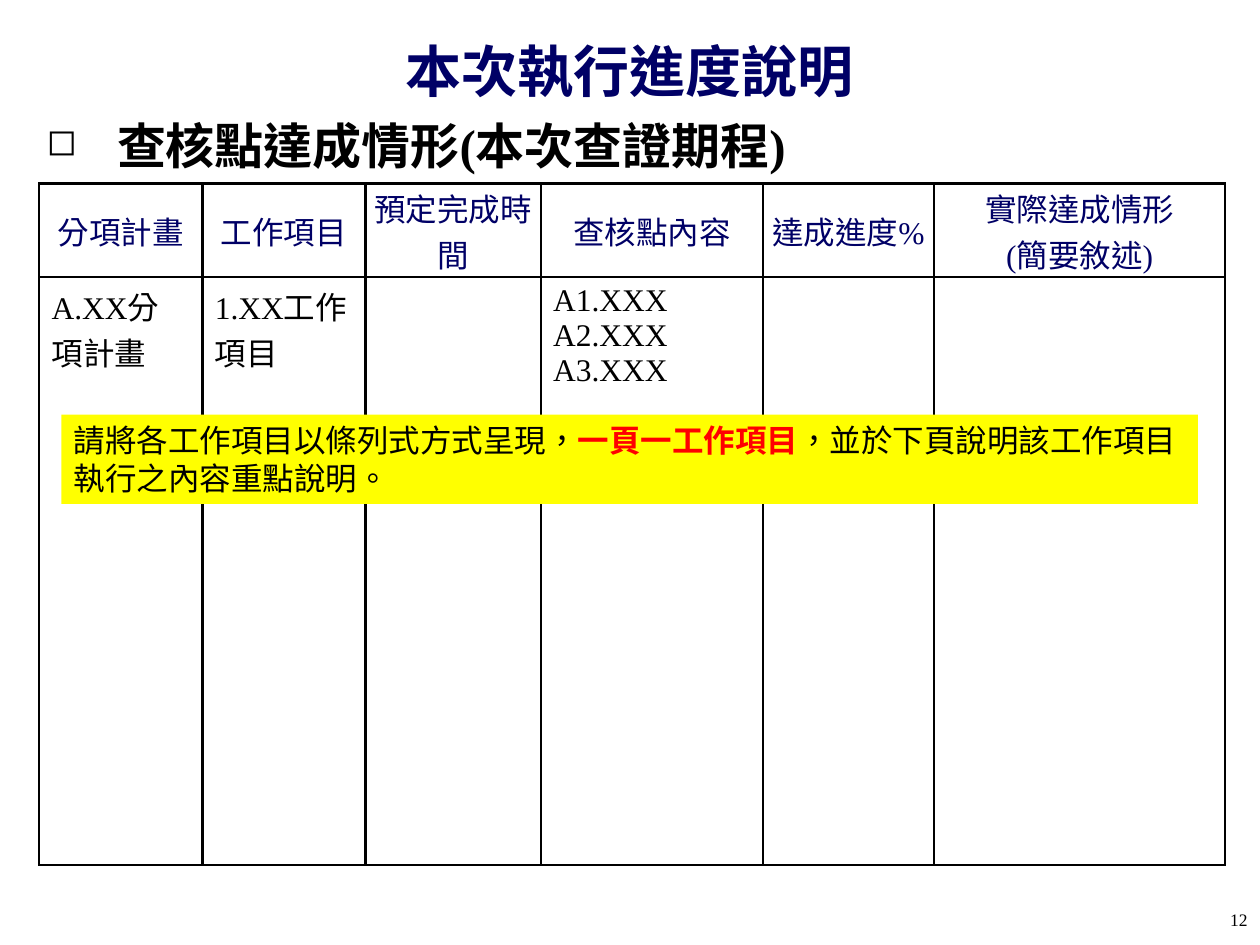
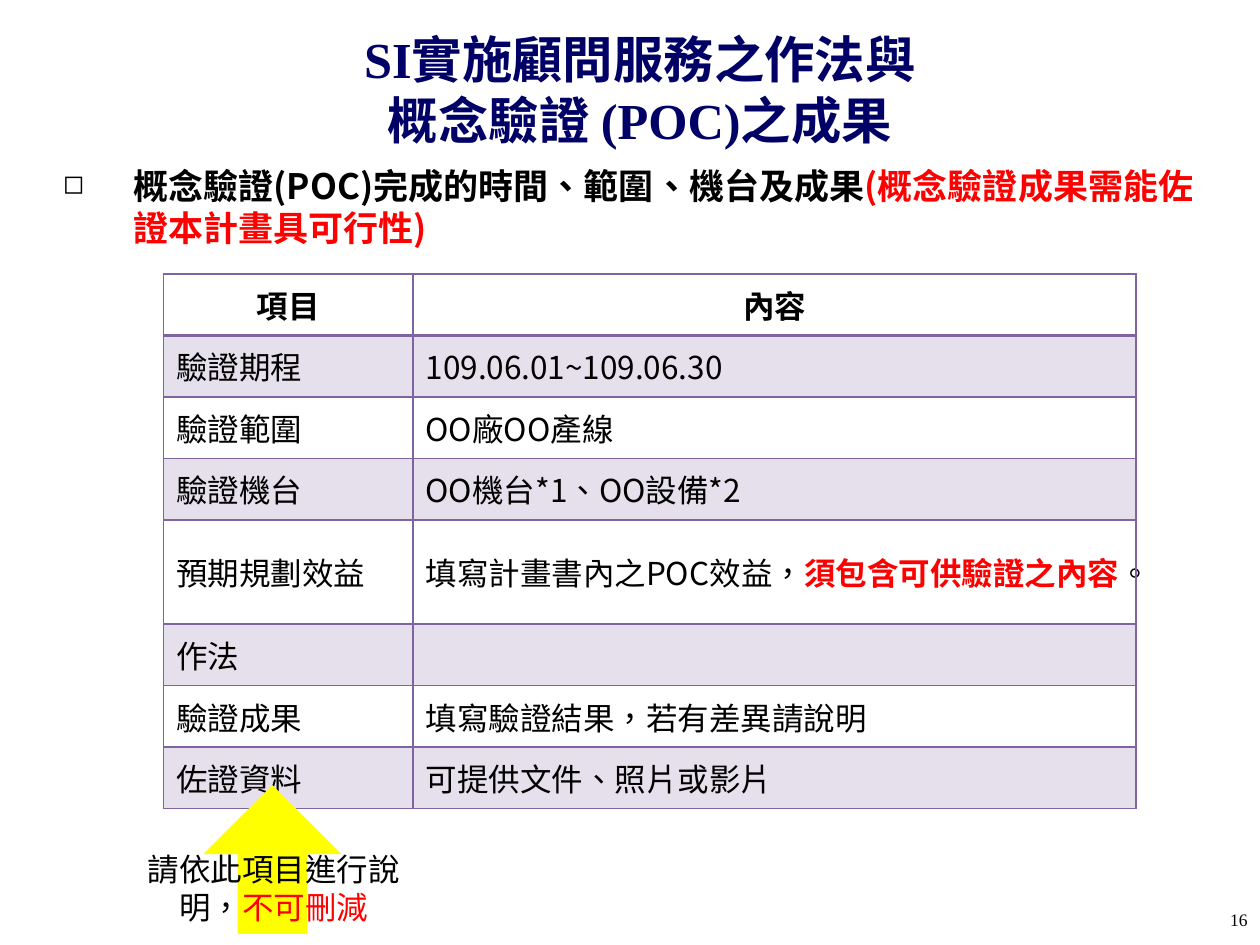
from dataclasses import dataclass, replace
from typing import NamedTuple, Optional

from lxml.etree import SubElement
from pptx import Presentation
from pptx.dml.color import RGBColor as Rgb
from pptx.enum.lang import MSO_LANGUAGE_ID as Lang
from pptx.enum.shapes import MSO_SHAPE as Shape
from pptx.enum.text import MSO_ANCHOR as Anchor, MSO_AUTO_SIZE as Auto, PP_ALIGN as Align
from pptx.oxml.ns import qn
from pptx.util import Cm, Pt


@dataclass(frozen=True)
class Theme:
    navy: str = "000066"
    black: str = "000000"
    red: str = "FF0000"
    yellow: str = "FFFF00"
    white: str = "FFFFFF"
    purple: str = "8064A2"
    lilac: str = "E6E0EC"
    serif: str = "Times New Roman"
    sans: str = "Noto Sans CJK SC"
    title: float = 32
    long_title: float = 28.8
    head: float = 28
    lead: float = 20
    text: float = 18
    page: float = 10
    leading: float = 1.2


T = Theme()


class Bit(NamedTuple):
    text: str
    color: Optional[str] = None
    bold: Optional[bool] = None


class Box(NamedTuple):
    """Left, top, width and height in centimetres."""
    left: float
    top: float
    width: float
    height: float

    def cm(self) -> list:
        return [Cm(n) for n in self]


@dataclass(frozen=True)
class Style:
    size: float = T.text
    face: str = T.sans
    color: str = T.black
    bold: bool = False
    align: Align = Align.LEFT
    tight: bool = True
    bullet: bool = False


@dataclass(frozen=True)
class Look:
    """Style, fill, anchor, margins and border widths of a table cell."""
    style: Style
    fill: Optional[str]
    edge: str
    line: float
    base: float
    anchor: Anchor = Anchor.MIDDLE
    inset: tuple = (0.25, 0.13, 0.25, 0.13)


TITLE = Style(T.title, T.serif, T.navy, True, Align.CENTER)
HEAD = Style(T.head, T.serif, bold=True, bullet=True)
LEAD = Style(T.lead, bold=True, bullet=True)
PAGE = Style(T.page, T.serif, align=Align.RIGHT)
NOTE = Style()
CELL = Style(tight=False)

PLAN_CELL = Look(replace(CELL, face=T.serif), T.white, T.black, 1.5, 1.5, Anchor.TOP)
PLAN_HEAD = replace(
    PLAN_CELL, anchor=Anchor.MIDDLE, inset=(0.03, 0.03, 0.03, 0),
    style=replace(PLAN_CELL.style, color=T.navy, align=Align.CENTER))
POC_CELL = Look(CELL, None, T.purple, 1, 1)
POC_BAND = replace(POC_CELL, fill=T.lilac)
POC_HEAD = replace(POC_CELL, base=2,
                   style=replace(CELL, bold=True, align=Align.CENTER))


def add_run(para, bit: Bit, style: Style) -> None:
    for n, part in enumerate(bit.text.split("\n")):
        if n:
            para.add_line_break()
        run = para.add_run()
        run.text = part
        font = run.font
        font.size = Pt(style.size)
        font.bold = style.bold if bit.bold is None else bit.bold
        font.color.rgb = Rgb.from_string(bit.color or style.color)
        font.language_id = Lang.TRADITIONAL_CHINESE
        font.name = style.face
        SubElement(font._element, qn("a:ea"), typeface=T.sans)


def write(frame, paras: list, style: Style) -> None:
    """Fill a text frame; a paragraph is a string or a list of bits."""
    for n, item in enumerate(paras):
        para = frame.add_paragraph() if n else frame.paragraphs[0]
        para.alignment = style.align
        if style.tight:
            para.line_spacing = Pt(style.size * T.leading)
        if style.bullet:
            props = para._p.get_or_add_pPr()
            props.set("marL", str(Cm(1.42)))
            props.set("indent", str(-Cm(1.42)))
            SubElement(props, qn("a:buSzPct"), val="75000")
            SubElement(props, qn("a:buChar"), char="◻")
        for bit in [Bit(item)] if isinstance(item, str) else item:
            add_run(para, bit, style)


def add_text(slide, box: Box, paras: list, style: Style, anchor=Anchor.TOP) -> None:
    frame = slide.shapes.add_textbox(*box.cm()).text_frame
    frame.word_wrap = True
    frame.vertical_anchor = anchor
    write(frame, paras, style)


def add_shape(slide, kind: Shape, box: Box, fill: str):
    shape = slide.shapes.add_shape(kind, *box.cm())
    shape.shadow.inherit = False
    shape.fill.solid()
    shape.fill.fore_color.rgb = Rgb.from_string(fill)
    shape.line.fill.background()
    return shape


def add_slide(deck, title: str, box: Box, style: Style, page: int):
    """Start a slide with its title and page number."""
    slide = deck.slides.add_slide(deck.slide_layouts[5])
    head = slide.shapes.title
    head.left, head.top, head.width, head.height = box.cm()
    frame = head.text_frame
    frame.word_wrap = True
    frame.auto_size = Auto.NONE
    frame.vertical_anchor = Anchor.MIDDLE
    write(frame, [title], style)
    add_text(slide, Box(19.48, 18.03, 5.92, 1.02), [str(page)], PAGE, Anchor.MIDDLE)
    return slide


def set_cell(cell, paras: list, look: Look) -> None:
    props = cell._tc.get_or_add_tcPr()
    for side in "LRTB":
        width = look.base if side == "B" else look.line
        line = SubElement(props, qn(f"a:ln{side}"), w=str(Pt(width)))
        fill = SubElement(line, qn("a:solidFill"))
        SubElement(fill, qn("a:srgbClr"), val=look.edge)
    if look.fill:
        cell.fill.solid()
        cell.fill.fore_color.rgb = Rgb.from_string(look.fill)
    else:
        cell.fill.background()
    cell.vertical_anchor = look.anchor
    (cell.margin_left, cell.margin_top,
     cell.margin_right, cell.margin_bottom) = [Cm(n) for n in look.inset]
    write(cell.text_frame, paras, look.style)


def add_grid(slide, left: float, top: float, cols: list, rows: list,
             data: list, looks: list) -> None:
    """Draw a table with one look for each row."""
    box = Box(left, top, sum(cols), sum(rows))
    grid = slide.shapes.add_table(len(rows), len(cols), *box.cm()).table
    grid.first_row = grid.horz_banding = False
    for col, width in zip(grid.columns, cols):
        col.width = Cm(width)
    for row, height, line, look in zip(grid.rows, rows, data, looks):
        row.height = Cm(height)
        for cell, paras in zip(row.cells, line):
            set_cell(cell, paras, look)


def add_plan(deck) -> None:
    slide = add_slide(deck, "本次執行進度說明", Box(1.27, 0.41, 22.86, 2.01), TITLE, 12)
    add_text(slide, Box(0.69, 2.21, 23.39, 1.5), ["查核點達成情形(本次查證期程)"], HEAD)
    data = [
        [["分項計畫"], ["工作項目"], ["預定完成時間"], ["查核點內容"],
         ["達成進度%"], ["實際達成情形", "(簡要敘述)"]],
        [["A.XX分項計畫"], ["1.XX工作項目"], [],
         [f"A{n}.XXX" for n in (1, 2, 3)], [], []],
    ]
    add_grid(slide, 0.79, 3.7, [3.29, 3.29, 3.53, 4.48, 3.45, 5.87],
             [1.88, 11.86], data, [PLAN_HEAD, PLAN_CELL])
    note = add_shape(slide, Shape.RECTANGLE, Box(1.24, 8.36, 22.91, 1.8), T.yellow)
    note.text_frame.word_wrap = True
    note.text_frame.vertical_anchor = Anchor.TOP
    write(note.text_frame, [[
        Bit("請將各工作項目以條列式方式呈現，"),
        Bit("一頁一工作項目", T.red, True),
        Bit("，並於下頁說明該工作項目執行之內容重點說明。")]], NOTE)


def add_poc(deck) -> None:
    slide = add_slide(deck, "SI實施顧問服務之作法與\n概念驗證 (POC)之成果",
                      Box(1.47, 0.79, 22.86, 2.01), replace(TITLE, size=T.long_title), 16)
    gain = [Bit("填寫計畫書內之POC效益，"),
            Bit("須包含可供驗證之內容", T.red, True), Bit("。")]
    data = [
        [["項目"], ["內容"]],
        [["驗證期程"], ["109.06.01~109.06.30"]],
        [["驗證範圍"], ["OO廠OO產線"]],
        [["驗證機台"], ["OO機台*1、OO設備*2"]],
        [["預期規劃效益"], [gain]],
        [["作法"], []],
        [["驗證成果"], ["填寫驗證結果，若有差異請說明"]],
        [["佐證資料"], ["可提供文件、照片或影片"]],
    ]
    looks = [POC_HEAD] + [POC_BAND if n % 2 else POC_CELL for n in range(1, len(data))]
    rows = [2.1 if gain in line[1] else 1.24 for line in data]
    add_grid(slide, 3.3, 5.52, [5.03, 14.57], rows, data, looks)
    arrow = add_shape(slide, Shape.RIGHT_ARROW, Box(3.99, 15.93, 3, 2.79), T.yellow)
    arrow.rotation = 270
    add_text(slide, Box(2.67, 17.02, 5.69, 1.8),
             [[Bit("請依此項目進行說明，"), Bit("不可刪減", T.red)]],
             replace(NOTE, align=Align.CENTER))
    add_text(slide, Box(1.02, 3.2, 23.39, 1.93),
             [[Bit("概念驗證(POC)完成的時間、範圍、機台及成果"),
               Bit("(概念驗證成果需能佐證本計畫具可行性)", T.red)]], LEAD)


def main() -> None:
    deck = Presentation()
    deck.slide_width, deck.slide_height = Cm(25.4), Cm(19.05)
    add_plan(deck)
    add_poc(deck)
    deck.save("out.pptx")


if __name__ == "__main__":
    main()
